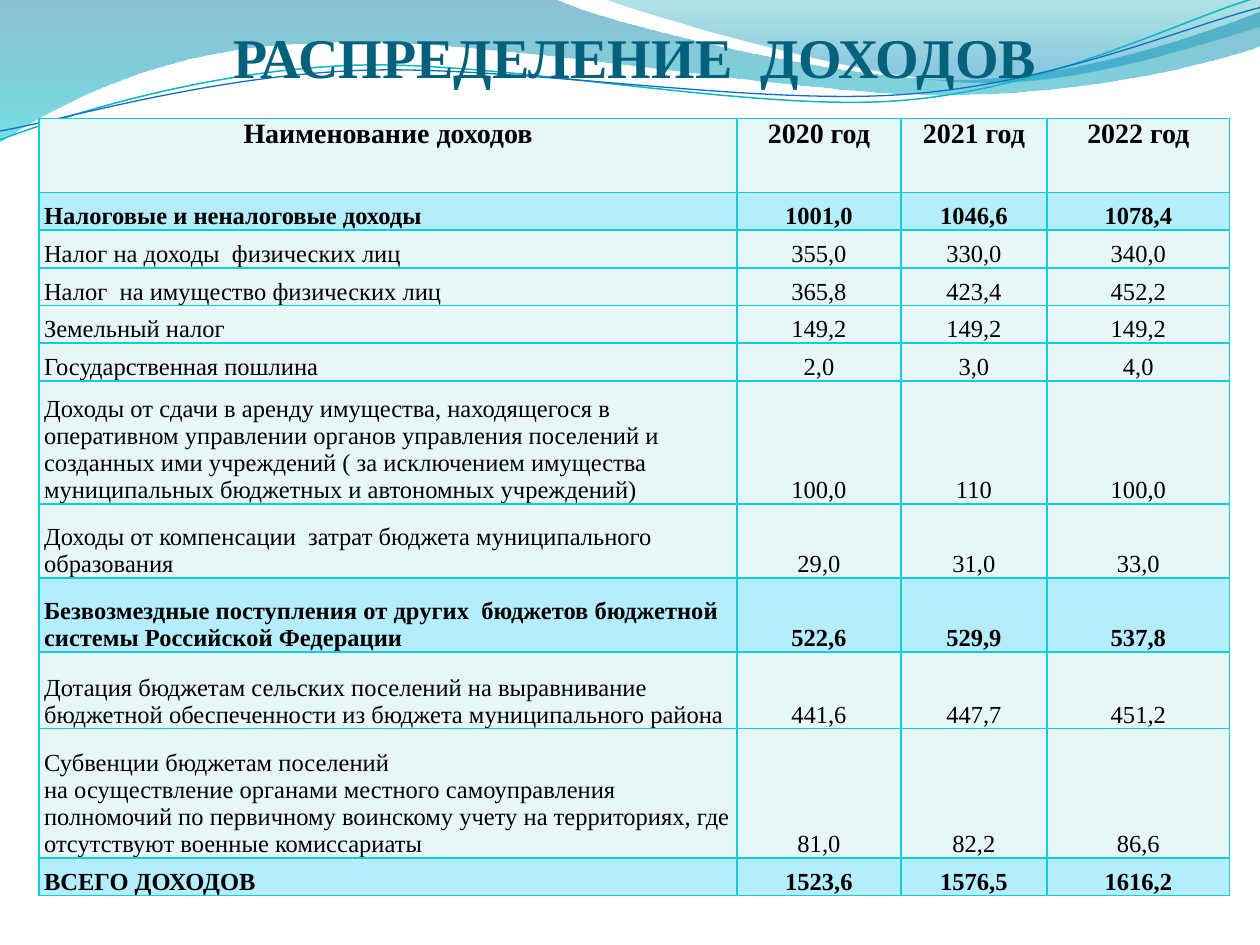
import pptx
import pptx.dml.color
import pptx.enum.text
import pptx.oxml
import pptx.oxml.ns
import pptx.util
from pptx.util import Inches

FONT = "Times New Roman"
PLAIN, ACCENT, BORDER = "E7F7F8", "B5EDFD", "0BD0D9"
CENTER = pptx.enum.text.PP_ALIGN.CENTER
LEFT = pptx.enum.text.PP_ALIGN.LEFT
ANCHOR = pptx.enum.text.MSO_ANCHOR
UNITS = 1000  # outline units to the inch

# Each path is a start point, then line ends (2 numbers) or Bezier curves (6 numbers)
LEFT_WAVE = [(0, 0), (4.4, -0.01), (4.76, 0.17, 6.64, 0.63, 7.58, 0.63),
             (8.53, 0.63, 9.58, 0.26, 10, 0.09), (10.01, 0.36),
             (9.83, 0.44, 8.7, 0.76, 7.46, 0.75), (6.22, 0.75, 3.82, 0.28, 2.57, 0.34),
             (1.29, 0.36, 0.46, 0.83, -0.01, 1.13)]
RIGHT_WAVE = [(4.79, -0.01), (5.09, 0.11, 6.82, 0.62, 7.69, 0.65),
              (8.56, 0.69, 9.61, 0.32, 10, 0.21), (10, 0)]
TEAL_STRAND = [(0, 1.11), (0.48, 0.93, 1.58, 0.57, 2.77, 0.52),
               (3.95, 0.47, 5.93, 0.89, 7.13, 0.8), (8.33, 0.71, 9.38, 0.15, 9.98, -0.02)]
BLUE_STRAND = [(0, 1.04), (0.47, 0.96, 1.64, 0.61, 2.83, 0.56),
               (4.03, 0.51, 5.97, 0.84, 7.17, 0.75), (8.36, 0.67, 9.41, 0.21, 10, 0.06)]

COLUMN_WIDTHS = [5.54, 1.3, 1.16, 1.45]
# Relative row height, name, values for the three years
INCOME = [
    (0.59, "Наименование доходов", "2020 год", "2021 год", "2022 год"),
    (0.3, "Налоговые и неналоговые доходы", "1001,0", "1046,6", "1078,4"),
    (0.3, "Налог на доходы  физических лиц", "355,0", "330,0", "340,0"),
    (0.3, "Налог  на имущество физических лиц", "365,8", "423,4", "452,2"),
    (0.3, "Земельный налог", "149,2", "149,2", "149,2"),
    (0.3, "Государственная пошлина", "2,0", "3,0", "4,0"),
    (0.98, "Доходы от сдачи в аренду имущества, находящегося в оперативном управлении "
     "органов управления поселений и созданных ими учреждений ( за исключением имущества "
     "муниципальных бюджетных и автономных учреждений)", "100,0", "110", "100,0"),
    (0.59, "Доходы от компенсации  затрат бюджета муниципального образования",
     "29,0", "31,0", "33,0"),
    (0.59, "Безвозмездные поступления от других  бюджетов бюджетной системы "
     "Российской Федерации", "522,6", "529,9", "537,8"),
    (0.61, "Дотация бюджетам сельских поселений на выравнивание бюджетной обеспеченности "
     "из бюджета муниципального района", "441,6", "447,7", "451,2"),
    (1.03, "Субвенции бюджетам поселений\nна осуществление органами местного самоуправления "
     "полномочий по первичному воинскому учету на территориях, где отсутствуют военные "
     "комиссариаты", "81,0", "82,2", "86,6"),
    (0.3, "ВСЕГО ДОХОДОВ", "1523,6", "1576,5", "1616,2"),
]
TOTAL_ROWS = {1, 8, 11}


def rgb(color):
    return pptx.dml.color.RGBColor.from_string(color)


def add_outline(slide, path, close):
    path = [[round(number * UNITS) for number in segment] for segment in path]
    ends = [segment[-2:] for segment in path]
    builder = slide.shapes.build_freeform(*ends[0], scale=Inches(1) / UNITS)
    builder.add_line_segments(ends[1:], close=close)
    outline = builder.convert_to_shape()
    outline.shadow.inherit = False
    # Bend the straight segments that have control points
    left, top = (min(axis) for axis in zip(*ends))
    straight = list(outline.element.iter(pptx.oxml.ns.qn("a:lnTo")))
    for line, segment in zip(straight, path[1:]):
        if len(segment) == 6:
            points = "".join(f'<a:pt x="{x - left}" y="{y - top}"/>'
                             for x, y in zip(segment[::2], segment[1::2]))
            line.getparent().replace(line, pptx.oxml.parse_xml(
                f'<a:cubicBezTo {pptx.oxml.ns.nsdecls("a")}>{points}</a:cubicBezTo>'))
    return outline


def add_wave(slide, path, stops):
    wave = add_outline(slide, path, close=True)
    wave.line.fill.background()
    wave.fill.gradient()
    wave.fill.gradient_angle = 270
    for stop, (position, color, _) in zip(wave.fill.gradient_stops, stops):
        stop.position = position
        stop.color.rgb = rgb(color)
    # Opacity of each stop
    color_tags = wave.element.spPr.iter(pptx.oxml.ns.qn("a:srgbClr"))
    for color_tag, (_, _, opacity) in zip(list(color_tags), stops):
        color_tag.append(pptx.oxml.parse_xml(
            f'<a:alpha {pptx.oxml.ns.nsdecls("a")} val="{opacity * 1000}"/>'))


def add_strand(slide, path, color, width):
    strand = add_outline(slide, path, close=False)
    strand.fill.background()
    strand.line.color.rgb = rgb(color)
    strand.line.width = pptx.util.Pt(width)


def add_header_waves(slide):
    add_wave(slide, LEFT_WAVE, [(0, "0074A1", 45), (1, "00C6CF", 55)])
    add_wave(slide, RIGHT_WAVE, [(0, "00A1A9", 30), (0.8, "008BBF", 45)])
    add_strand(slide, TEAL_STRAND, "0AB8BF", 0.85)
    add_strand(slide, BLUE_STRAND, "0F6FC6", 0.75)


def style_paragraph(paragraph, size, color, bold, align):
    paragraph.alignment = align
    paragraph.font.name = FONT
    paragraph.font.size = pptx.util.Pt(size)
    paragraph.font.color.rgb = rgb(color)
    paragraph.font.bold = bold


def add_title(slide, left, top, width, height):
    title = slide.shapes.add_textbox(
        Inches(left), Inches(top), Inches(width), Inches(height)).text_frame
    title.word_wrap = True
    title.margin_left = title.margin_right = title.margin_top = title.margin_bottom = 0
    title.text = "РАСПРЕДЕЛЕНИЕ  ДОХОДОВ"
    style_paragraph(title.paragraphs[0], 32, "04617B", True, CENTER)


def add_borders(cell):
    properties = cell._tc.get_or_add_tcPr()
    for side in ("lnL", "lnR", "lnT", "lnB"):
        properties.append(pptx.oxml.parse_xml(
            f'<a:{side} {pptx.oxml.ns.nsdecls("a")} w="12700"><a:solidFill>'
            f'<a:srgbClr val="{BORDER}"/></a:solidFill></a:{side}>'))


def add_income_table(slide, left, top, width, height):
    table = slide.shapes.add_table(
        len(INCOME), len(COLUMN_WIDTHS),
        Inches(left), Inches(top), Inches(width), Inches(height)).table
    table.first_row = table.horz_banding = False
    for column, column_width in zip(table.columns, COLUMN_WIDTHS):
        column.width = Inches(column_width)
    row_scale = height / sum(row[0] for row in INCOME)
    for row, (row_height, *texts) in enumerate(INCOME):
        table.rows[row].height = Inches(row_height * row_scale)
        header, total = row == 0, row in TOTAL_ROWS
        for column, text in enumerate(texts):
            cell = table.cell(row, column)
            cell.margin_left = cell.margin_right = Inches(0.04)
            cell.margin_top = cell.margin_bottom = 0
            cell.vertical_anchor = ANCHOR.TOP if header else ANCHOR.BOTTOM
            add_borders(cell)
            cell.fill.solid()
            cell.fill.fore_color.rgb = rgb(ACCENT if total else PLAIN)
            cell.text = text
            for paragraph in cell.text_frame.paragraphs:
                style_paragraph(paragraph, 16 if header else 14, "000000", header or total,
                                CENTER if header or column else LEFT)


def main():
    deck = pptx.Presentation()
    deck.slide_width, deck.slide_height = Inches(10), Inches(7.5)
    slide = deck.slides.add_slide(deck.slide_layouts[6])
    add_header_waves(slide)
    add_title(slide, 0.5, 0.18, 9.08, 0.39)
    add_income_table(slide, 0.31, 0.94, 9.45, 6.17)
    deck.save("out.pptx")


if __name__ == "__main__":
    main()
